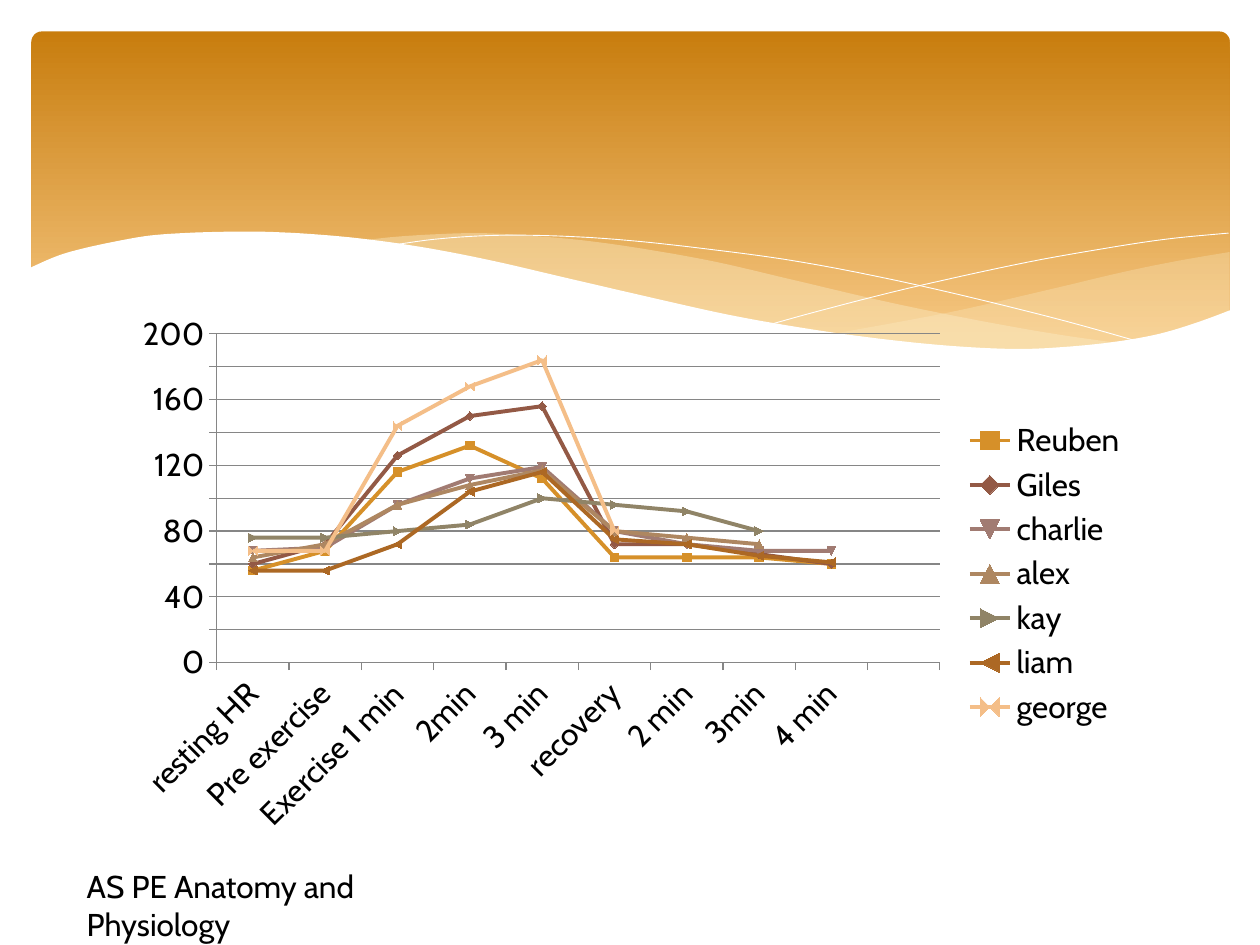
import lxml.etree
import pptx
import pptx.chart.data
import pptx.dml.color
import pptx.enum.chart
import pptx.enum.shapes
import pptx.oxml.ns
import pptx.util

Inches, Pt = pptx.util.Inches, pptx.util.Pt
qn = pptx.oxml.ns.qn


def color(value):
    return pptx.dml.color.RGBColor.from_string(value)


def apply(target, values):
    for name, value in values.items():
        setattr(target, name, value)


def smooth(points, steps=6):
    if len(points) < 3:
        return points
    padded = [points[0], *points, points[-1]]
    curve = [points[0]]
    for a, b, c, d in zip(padded, padded[1:], padded[2:], padded[3:]):
        for i in range(1, steps + 1):
            t = i / steps
            curve.append(tuple(
                0.5 * (2 * q + (r - p) * t + (2 * p - 5 * q + 4 * r - s) * t ** 2
                       + (3 * q - p - 3 * r + s) * t ** 3)
                for p, q, r, s in zip(a, b, c, d)))
    return curve


class Deck:
    font = "Cabin"
    text = "000000"
    grid = "868686"
    size = 18

    def __init__(self, prs):
        self.s = prs.slides.add_slide(prs.slide_layouts[6])

    def style(self, font):
        apply(font, {"name": self.font, "size": Pt(self.size)})
        font.color.rgb = color(self.text)

    def panel(self, box, radius, stops):
        sp = self.s.shapes.add_shape(
            pptx.enum.shapes.MSO_SHAPE.ROUNDED_RECTANGLE, *map(Inches, box))
        sp.adjustments[0] = radius
        sp.shadow.inherit = False
        sp.line.fill.background()
        sp.fill.gradient()
        sp.fill.gradient_angle = 270
        for stop, (position, value) in zip(sp.fill.gradient_stops, stops):
            stop.position = position
            stop.color.rgb = color(value)

    def wave(self, curves, fill=None, alpha=100, line=None):
        points = [(Inches(x), Inches(y)) for curve in curves for x, y in smooth(curve)]
        builder = self.s.shapes.build_freeform(*points[0])
        builder.add_line_segments(points[1:], close=fill is not None)
        sp = builder.convert_to_shape()
        sp.shadow.inherit = False
        if fill:
            sp.fill.solid()
            sp.fill.fore_color.rgb = color(fill)
            solid = sp.fill._xPr.find(qn("a:solidFill"))
            lxml.etree.SubElement(solid[0], qn("a:alpha"), val=str(alpha * 1000))
        else:
            sp.fill.background()
        if line:
            sp.line.color.rgb = color(line)
            sp.line.width = Pt(0.5)
        else:
            sp.line.fill.background()

    def label(self, box, text):
        tf = self.s.shapes.add_textbox(*map(Inches, box)).text_frame
        tf.word_wrap = True
        r = tf.paragraphs[0].add_run()
        r.text = text
        self.style(r.font)

    def line_chart(self, box, plot, categories, series):
        data = pptx.chart.data.CategoryChartData()
        data.categories = categories
        for name, _, values in series:
            data.add_series(name, values + [None] * (len(categories) - len(values)))
        chart = self.s.shapes.add_chart(
            pptx.enum.chart.XL_CHART_TYPE.LINE_MARKERS, *map(Inches, box), data).chart
        self.style(chart.font)
        apply(chart, {"has_title": False, "has_legend": True})
        apply(chart.legend, {
            "position": pptx.enum.chart.XL_LEGEND_POSITION.RIGHT,
            "include_in_layout": False})
        chart.plots[0].vary_by_categories = False
        for ser, (_, value, _) in zip(chart.plots[0].series, series):
            ser.smooth = False
            ser.format.line.width = Pt(2.25)
            ser.format.line.color.rgb = color(value)
            ser.marker.format.fill.solid()
            ser.marker.format.fill.fore_color.rgb = color(value)
            ser.marker.format.line.color.rgb = color(value)
        apply(chart.value_axis, {
            "minimum_scale": 0, "maximum_scale": 200, "major_unit": 20,
            "has_major_gridlines": True})
        chart.category_axis.has_major_gridlines = False
        for axis in (chart.value_axis, chart.category_axis):
            axis.major_tick_mark = pptx.enum.chart.XL_TICK_MARK.OUTSIDE
            axis.format.line.color.rgb = color(self.grid)
            self.style(axis.tick_labels.font)
        chart.value_axis.major_gridlines.format.line.color.rgb = color(self.grid)
        body = chart.category_axis._element.find(qn("c:txPr")).find(qn("a:bodyPr"))
        body.set("rot", "-2700000")
        body.set("vert", "horz")
        self.place_plot(chart, box, plot)

    def place_plot(self, chart, box, plot):
        left, top, width, height = box
        x, y, w, h = plot
        area = chart._chartSpace.chart.plotArea
        for old in area.findall(qn("c:layout")):
            area.remove(old)
        layout = lxml.etree.Element(qn("c:layout"))
        manual = lxml.etree.SubElement(layout, qn("c:manualLayout"))
        settings = {
            "layoutTarget": "inner", "xMode": "edge", "yMode": "edge",
            "x": (x - left) / width, "y": (y - top) / height,
            "w": w / width, "h": h / height}
        for name, value in settings.items():
            lxml.etree.SubElement(manual, qn("c:" + name), val=str(value))
        area.insert(0, layout)


RIGHT_WAVE = [
    [(9.76, 2), (9.35, 2.07), (8.91, 2.16), (8.32, 2.3), (7.53, 2.48), (6.61, 2.65)],
    [(6.61, 2.65), (7.05, 2.71), (7.45, 2.75), (8.03, 2.78), (8.54, 2.76),
     (8.97, 2.7), (9.35, 2.62), (9.76, 2.47)],
]
MIDDLE_WAVE = [
    [(8.93, 2.73), (8.37, 2.65), (7.75, 2.54), (7.06, 2.4), (6.29, 2.22),
     (5.69, 2.08), (5.14, 1.98), (4.65, 1.91), (4.2, 1.87), (3.8, 1.85),
     (3.44, 1.86), (3.13, 1.88), (2.86, 1.91)],
    [(2.86, 1.91), (3.42, 1.99), (4.04, 2.11), (4.49, 2.22), (5.3, 2.4),
     (6.01, 2.55), (6.65, 2.66), (7.22, 2.74), (7.73, 2.77), (8.18, 2.78),
     (8.57, 2.77), (8.93, 2.73)],
]
FALLING_LINE = [
    [(3.09, 1.95), (3.44, 1.9), (3.87, 1.87), (4.33, 1.87), (4.89, 1.9),
     (5.56, 1.97), (6.36, 2.08), (7.27, 2.26), (8.31, 2.51), (9.07, 2.72)],
]
RISING_LINE = [
    [(6.13, 2.57), (6.53, 2.46), (7.2, 2.29), (8.06, 2.1), (8.66, 1.99),
     (9.24, 1.9), (9.75, 1.85)],
]
LOWER_EDGE = [
    [(9.77, 2.46), (9.5, 2.56), (9.2, 2.65), (8.87, 2.71), (8.5, 2.75),
     (8.09, 2.77), (7.61, 2.75), (7.08, 2.7), (6.48, 2.62), (5.79, 2.5),
     (5.03, 2.33), (4.47, 2.2), (3.91, 2.07), (3.4, 1.97), (2.92, 1.9),
     (2.5, 1.86), (2.11, 1.84), (1.77, 1.84), (1.46, 1.85), (1.19, 1.87),
     (0.95, 1.91), (0.67, 1.97), (0.46, 2.03), (0.23, 2.13)],
    [(0.23, 3.29), (9.77, 3.29)],
]
CATEGORIES = ["resting HR", "Pre exercise", "Exercise 1 min", "2min", "3 min",
              "recovery", "2 min", "3min", "4 min", ""]
HEART_RATES = [
    ("Reuben", "D69029", [56, 68, 116, 132, 112, 64, 64, 64, 60]),
    ("Giles", "935945", [60, 72, 126, 150, 156, 72, 72, 66, 60]),
    ("charlie", "A17B72", [68, 70, 96, 112, 119, 80, 72, 68, 68]),
    ("alex", "AE8761", [64, 72, 96, 108, 117, 80, 76, 72]),
    ("kay", "908467", [76, 76, 80, 84, 100, 96, 92, 80]),
    ("liam", "AC6824", [56, 56, 72, 104, 116, 75, 72, 65, 61]),
    ("george", "F4BE88", [68, 68, 144, 168, 184, 80]),
]


def main():
    prs = pptx.Presentation()
    apply(prs, {"slide_width": Inches(10), "slide_height": Inches(7.5)})
    deck = Deck(prs)
    deck.panel((0.25, 0.25, 9.51, 2.7), 0.03, [(0, "C87D0E"), (0.9, "F6C782")])
    deck.wave(RIGHT_WAVE, fill="FBEEC9", alpha=29)
    deck.wave(MIDDLE_WAVE, fill="FBEEC9", alpha=40)
    for curve in (FALLING_LINE, RISING_LINE):
        deck.wave(curve, line="FFFFFF")
    deck.wave(LOWER_EDGE, fill="FFFFFF")
    deck.label((0.59, 6.83, 3.4, 0.4), "AS PE Anatomy and Physiology")
    deck.line_chart((0.95, 2.41, 8.1, 4.29), (1.72, 2.65, 5.74, 2.61),
                    CATEGORIES, HEART_RATES)
    prs.save("out.pptx")


if __name__ == "__main__":
    main()
